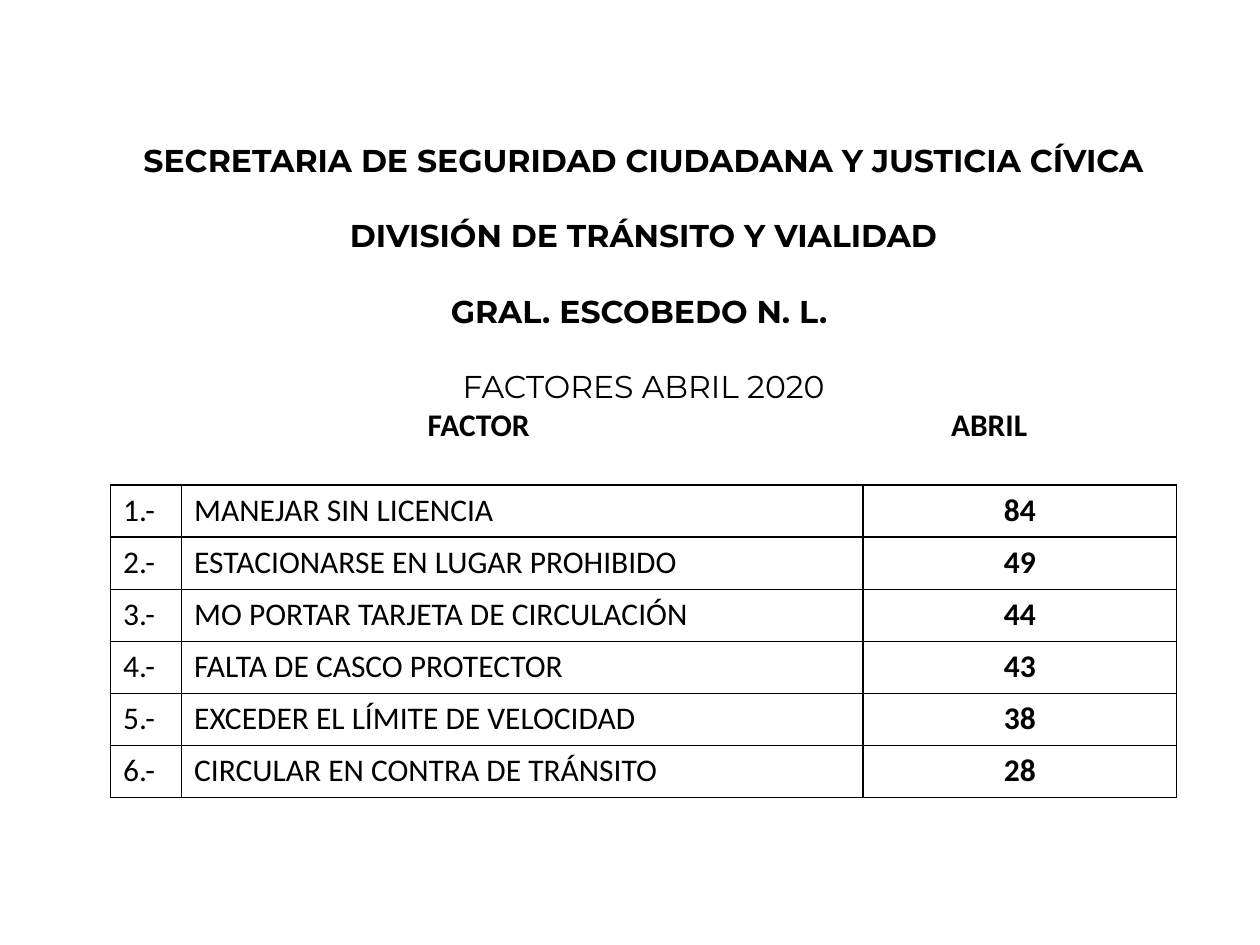
from lxml.etree import SubElement
from pptx import Presentation
from pptx.dml.color import RGBColor
from pptx.enum.text import MSO_AUTO_SIZE, PP_ALIGN
from pptx.oxml.ns import qn
from pptx.util import Cm, Pt

COLORS = {"ink": "000000", "paper": "FFFFFF"}
HEADINGS = [
    ("SECRETARIA DE SEGURIDAD CIUDADANA Y JUSTICIA CÍVICA", True),
    ("DIVISIÓN DE TRÁNSITO Y VIALIDAD", True),
    ("GRAL. ESCOBEDO N. L. ", True),
    ("FACTORES ABRIL 2020", False),
]
COLUMN_TITLES = [("FACTOR", 7.17), ("ABRIL", 17.46)]
FACTORS = [
    ("MANEJAR SIN LICENCIA", 84),
    ("ESTACIONARSE EN LUGAR PROHIBIDO", 49),
    ("MO PORTAR TARJETA DE CIRCULACIÓN", 44),
    ("FALTA DE CASCO PROTECTOR", 43),
    ("EXCEDER EL LÍMITE DE VELOCIDAD", 38),
    ("CIRCULAR EN CONTRA DE TRÁNSITO", 28),
]
COLUMN_WIDTHS = [1.43, 13.74, 6.32]
ROW_HEIGHT = 1.05
LEFT = 2.23


class FactorSlide:
    """Draws headings and a bordered table on one slide."""

    heading_font = "Montserrat"
    body_font = "Calibri"
    size = Pt(18)

    def __init__(self, slide):
        self.slide = slide

    def run(self, paragraph, text, font, bold=False):
        run = paragraph.add_run()
        run.text = text
        run.font.name = font
        run.font.size = self.size
        run.font.bold = bold
        run.font.color.rgb = RGBColor.from_string(COLORS["ink"])

    def headings(self, lines, column_titles):
        shape = self.slide.shapes.add_textbox(
            Cm(LEFT), Cm(2.72), Cm(sum(COLUMN_WIDTHS)), Cm(7.19))
        frame = shape.text_frame
        frame.word_wrap = True
        frame.auto_size = MSO_AUTO_SIZE.SHAPE_TO_FIT_TEXT
        for index, (text, bold) in enumerate(lines):
            paragraph = frame.add_paragraph() if index else frame.paragraphs[0]
            paragraph.alignment = PP_ALIGN.CENTER
            if index:
                paragraph.space_before = Pt(21.5)
            self.run(paragraph, text, self.heading_font, bold)
        self.tabbed_line(frame.add_paragraph(), column_titles)

    def tabbed_line(self, paragraph, titles):
        paragraph.alignment = PP_ALIGN.LEFT
        tabs = SubElement(paragraph._p.get_or_add_pPr(), qn("a:tabLst"))
        for text, position in titles:
            SubElement(tabs, qn("a:tab"), pos=str(Cm(position)), algn="ctr")
            self.run(paragraph, "\t" + text, self.body_font, True)

    def borders(self, cell):
        properties = cell._tc.get_or_add_tcPr()
        for side in ("a:lnL", "a:lnR", "a:lnT", "a:lnB"):
            line = SubElement(properties, qn(side), w=str(Pt(1)))
            fill = SubElement(line, qn("a:solidFill"))
            SubElement(fill, qn("a:srgbClr"), val=COLORS["ink"])

    def cell(self, cell, text, bold, alignment):
        self.borders(cell)
        cell.fill.solid()
        cell.fill.fore_color.rgb = RGBColor.from_string(COLORS["paper"])
        paragraph = cell.text_frame.paragraphs[0]
        paragraph.alignment = alignment
        self.run(paragraph, text, self.body_font, bold)

    def table(self, factors):
        table = self.slide.shapes.add_table(
            len(factors), len(COLUMN_WIDTHS), Cm(LEFT), Cm(9.78),
            Cm(sum(COLUMN_WIDTHS)), Cm(ROW_HEIGHT * len(factors))).table
        table.first_row = table.horz_banding = False
        for column, width in zip(table.columns, COLUMN_WIDTHS):
            column.width = Cm(width)
        for index, (name, count) in enumerate(factors):
            table.rows[index].height = Cm(ROW_HEIGHT)
            self.cell(table.cell(index, 0), f"{index + 1}.-", False, PP_ALIGN.LEFT)
            self.cell(table.cell(index, 1), name, False, PP_ALIGN.LEFT)
            self.cell(table.cell(index, 2), str(count), True, PP_ALIGN.CENTER)


def main():
    presentation = Presentation()
    presentation.slide_width = Cm(25.4)
    presentation.slide_height = Cm(19.05)
    slide = presentation.slides.add_slide(presentation.slide_layouts[6])
    factor_slide = FactorSlide(slide)
    factor_slide.table(FACTORS)
    factor_slide.headings(HEADINGS, COLUMN_TITLES)
    presentation.save("out.pptx")


if __name__ == "__main__":
    main()
